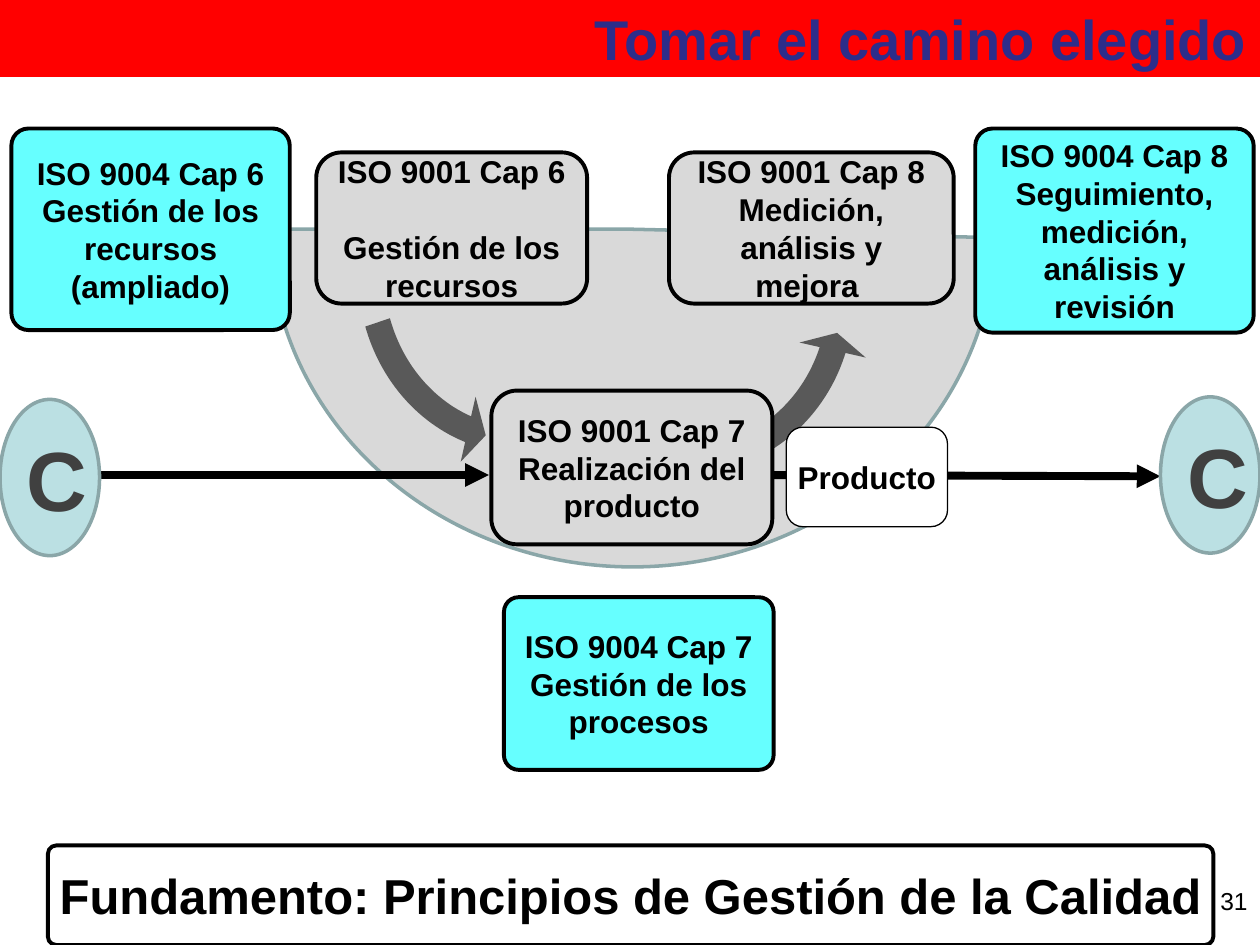
from lxml import etree
from pptx import Presentation
from pptx.dml.color import RGBColor
from pptx.enum.shapes import MSO_CONNECTOR, MSO_SHAPE
from pptx.enum.text import MSO_ANCHOR, PP_ALIGN
from pptx.oxml.ns import qn
from pptx.util import Inches, Pt

ROUNDED = MSO_SHAPE.ROUNDED_RECTANGLE
OVAL = MSO_SHAPE.OVAL
BLOCK_ARC = MSO_SHAPE.BLOCK_ARC
CURVED_ARROW = MSO_SHAPE.CIRCULAR_ARROW
STRAIGHT = MSO_CONNECTOR.STRAIGHT
MIDDLE, TOP = MSO_ANCHOR.MIDDLE, MSO_ANCHOR.TOP
CENTER, RIGHT = PP_ALIGN.CENTER, PP_ALIGN.RIGHT

COLUMNS, ROWS = 100, 75
TITLE_ONLY = 5
BLACK, WHITE, GREY = "000000", "FFFFFF", "D9D9D9"
CYAN, TEAL, EDGE = "66FFFF", "BBE0E3", "8AA6A8"


def color(hex_text):
    return RGBColor.from_string(hex_text)


class SlideBuilder:
    """Places elements on a grid of 100 columns by 75 rows."""

    font = "Arial"

    def __init__(self, deck):
        self.column = deck.slide_width / COLUMNS
        self.row = deck.slide_height / ROWS
        self.slide = deck.slides.add_slide(deck.slide_layouts[TITLE_ONLY])

    def frame(self, left, top, width, height):
        return (round(left * self.column), round(top * self.row),
                round(width * self.column), round(height * self.row))

    def set_text(self, shape, text, size=18, ink=BLACK, bold=True,
                 align=CENTER, anchor=MIDDLE, wrap=True):
        body = shape.text_frame
        body.text = text
        body.word_wrap = wrap
        body.vertical_anchor = anchor
        for paragraph in body.paragraphs:
            paragraph.alignment = align
            for run in paragraph.runs:
                run.font.name = self.font
                run.font.size = Pt(size)
                run.font.bold = bold
                run.font.color.rgb = color(ink)

    def title(self, text, area, fill, ink):
        banner = self.slide.shapes.title
        banner.left, banner.top, banner.width, banner.height = self.frame(*area)
        banner.fill.solid()
        banner.fill.fore_color.rgb = color(fill)
        self.set_text(banner, text, 32, ink, align=RIGHT)

    def shape(self, kind, area, fill, edge=None, edge_width=2.25, adjust=(),
              flip=False, rotation=0):
        item = self.slide.shapes.add_shape(kind, *self.frame(*area))
        item.shadow.inherit = False
        item.fill.solid()
        item.fill.fore_color.rgb = color(fill)
        if edge:
            item.line.color.rgb = color(edge)
            item.line.width = Pt(edge_width)
        else:
            item.line.fill.background()
        for index, value in enumerate(adjust):
            item.adjustments[index] = value
        item.rotation = rotation
        if flip:
            item._element.spPr.find(qn("a:xfrm")).set("flipV", "1")
        return item

    def box(self, text, area, fill, corner=0.167, edge_width=2.25, **style):
        item = self.shape(ROUNDED, area, fill, BLACK, edge_width, (corner,))
        self.set_text(item, text, **style)

    def client(self, left, top):
        item = self.shape(OVAL, (left, top, 7.9, 12.4), TEAL, EDGE, 2)
        self.set_text(item, "C", 48, "404040")

    def arrow(self, left, top, right, bottom):
        ends = self.frame(left, top, right, bottom)
        connector = self.slide.shapes.add_connector(STRAIGHT, *ends)
        connector.line.color.rgb = color(BLACK)
        connector.line.width = Pt(4.5)
        properties = connector._element.spPr
        outline = properties.find(qn("a:ln"))
        etree.SubElement(outline, qn("a:tailEnd"), type="triangle")
        etree.SubElement(properties, qn("a:effectLst"))

    def label(self, text, area, **style):
        item = self.slide.shapes.add_textbox(*self.frame(*area))
        self.set_text(item, text, **style)


def main():
    deck = Presentation()
    deck.slide_width, deck.slide_height = Inches(10), Inches(7.5)
    page = SlideBuilder(deck)
    page.title("Tomar el camino elegido", (0, 0, 100, 6.1), "FF0000", "2D2D8A")

    page.shape(BLOCK_ARC, (21.4, -8.6, 57.6, 53.6), GREY, EDGE, 2,
               (107.98, 215.2, 0.5), flip=True)
    page.shape(CURVED_ARROW, (39.5, 8.1, 29.9, 31.2), "595959", flip=True,
               adjust=(0.07, 3.94, 204.39, 176.41, 0.09))
    page.shape(CURVED_ARROW, (25.6, 7, 31.8, 29.4), "595959", flip=True,
               adjust=(0.07, 3.87, 204.39, 173.18, 0.09), rotation=90)
    page.arrow(7.6, 37.7, 38.8, 37.7)
    page.arrow(57.9, 37.7, 92.1, 37.8)
    page.box("Producto", (62.4, 33.9, 12.8, 7.9), WHITE,
             edge_width=0.75, wrap=False)

    iso_9004 = [
        ("ISO 9004 Cap 6\vGestión de los recursos\v(ampliado)",
         (0.9, 10.2, 22.1, 16)),
        ("ISO 9004 Cap 8 Seguimiento, medición, análisis y revisión",
         (77.4, 10.2, 22.1, 16.2)),
        ("ISO 9004 Cap 7\vGestión de los procesos", (40, 47.4, 21.4, 13.7)),
    ]
    iso_9001 = [
        ("ISO 9001 Cap 8\vMedición, análisis y mejora ",
         (53.1, 12.1, 22.6, 12)),
        ("ISO 9001 Cap 6 \vGestión de los recursos", (25.1, 12.1, 21.5, 12)),
        ("ISO 9001 Cap 7\nRealización del producto", (39, 31, 22.3, 12.2)),
    ]
    for text, area in iso_9004:
        page.box(text, area, CYAN, corner=0.085)
    for text, area in iso_9001:
        page.box(text, area, GREY)

    page.box("Fundamento: Principios de Gestión de la Calidad",
             (3.8, 67.1, 92.5, 7.9), WHITE, corner=0.085, size=28, wrap=False)
    page.client(0, 31.7)
    page.client(92.1, 31.5)
    page.label("31", (76.7, 69.8, 23.3, 5.2), size=14, bold=False,
               align=RIGHT, anchor=TOP)
    deck.save("out.pptx")


if __name__ == "__main__":
    main()
